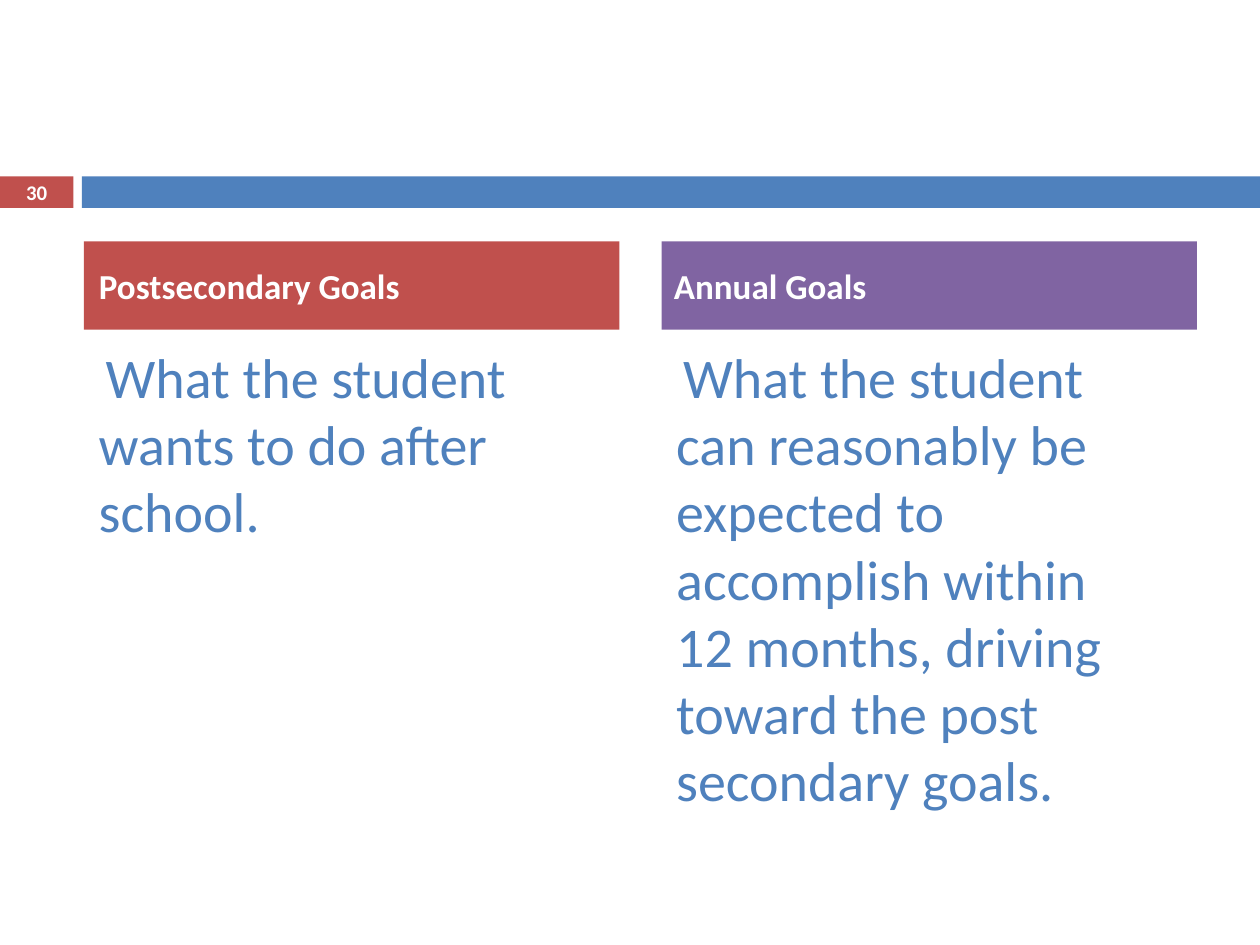
from pptx import Presentation
from pptx.dml.color import RGBColor
from pptx.enum import shapes, text
from pptx.util import Pt

RED, BLUE, PURPLE, WHITE = "C0504D", "4F81BD", "8064A2", "FFFFFF"


def add_rectangle(left, top, width, height, color):
    shape = slide.shapes.add_shape(
        shapes.MSO_SHAPE.RECTANGLE, Pt(left), Pt(top), Pt(width), Pt(height))
    shape.shadow.inherit = False
    shape.fill.solid()
    shape.fill.fore_color.rgb = RGBColor.from_string(color)
    shape.line.fill.background()
    return shape


def write(shape, words, color, frame_format, paragraph_format, font_format):
    frame = shape.text_frame
    frame.word_wrap = True
    paragraph = frame.paragraphs[0]
    run = paragraph.add_run()
    run.text = words
    run.font.color.rgb = RGBColor.from_string(color)
    for target, values in ((frame, frame_format), (paragraph, paragraph_format),
                           (run.font, {"name": "Calibri", **font_format})):
        for name, value in values.items():
            setattr(target, name, value)


presentation = Presentation()
presentation.slide_width, presentation.slide_height = Pt(720), Pt(540)
slide = presentation.slides.add_slide(presentation.slide_layouts[6])

number_box = add_rectangle(0, 100.8, 42, 18, RED)
add_rectangle(46.8, 100.8, 673.2, 18, BLUE)
middle = {"vertical_anchor": text.MSO_ANCHOR.MIDDLE}
write(number_box, "30", WHITE, {**middle, "margin_top": 0, "margin_bottom": 0},
      {"alignment": text.PP_ALIGN.CENTER}, {"size": Pt(11.9), "bold": True})

columns = [
    (48, 24, RED, 8.5, "Postsecondary Goals",
     "What the student wants to do after school."),
    (378, 354, PURPLE, 7.2, "Annual Goals",
     "What the student can reasonably be expected to accomplish within "
     "12 months, driving toward the post secondary goals."),
]
for header_left, body_left, color, inset, heading, description in columns:
    header = add_rectangle(header_left, 138, 306, 50.4, color)
    write(header, heading, WHITE, {**middle, "margin_left": Pt(inset)},
          {"alignment": text.PP_ALIGN.LEFT, "space_before": Pt(7)},
          {"size": Pt(20), "bold": True})

    body = slide.shapes.add_textbox(Pt(body_left), Pt(192.2), Pt(306), Pt(282.2))
    write(body, description, BLUE, {"margin_left": Pt(32.4)},
          {"space_before": Pt(7)}, {"size": Pt(32)})
    properties = body.text_frame.paragraphs[0]._p.get_or_add_pPr()
    properties.set("indent", str(Pt(4)))

presentation.save("out.pptx")
